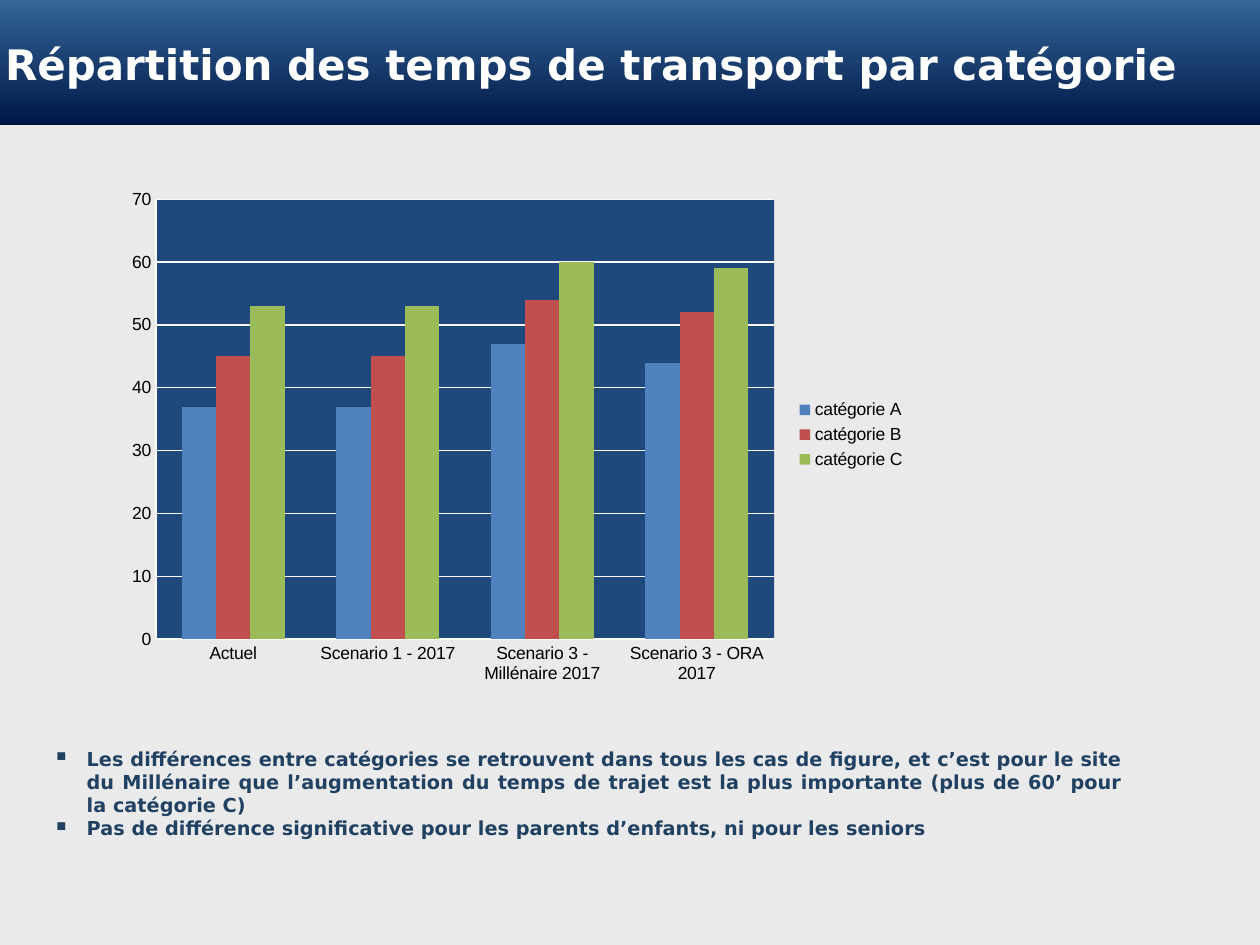
from lxml import etree
from pptx import Presentation
from pptx import util as u
from pptx.chart import data as chart_data
from pptx.dml import color
from pptx.enum import chart as ch
from pptx.enum import shapes, text
from pptx.oxml import parse_xml
from pptx.oxml import ns

CATEGORIES = ["Actuel", "Scenario 1 - 2017", "Scenario 3 - Millénaire 2017", "Scenario 3 - ORA 2017"]
SERIES = [
    ("catégorie A", (37, 37, 47, 44), "4F81BD"),
    ("catégorie B", (45, 45, 54, 52), "C0504D"),
    ("catégorie C", (53, 53, 60, 59), "9BBB59"),
]
COMMENTS = [
    "Les différences entre catégories se retrouvent dans tous les cas de figure, et c’est pour le site "
    "du Millénaire que l’augmentation du temps de trajet est la plus importante (plus de 60’ pour la catégorie C)",
    "Pas de différence significative pour les parents d’enfants, ni pour les seniors",
]


def rgb(value):
    """Turn a hex string into a colour."""
    return color.RGBColor.from_string(value)


def inches(*lengths):
    """Convert several lengths to inches."""
    return [u.Inches(length) for length in lengths]


def format_font(font, name, size, hex_color, bold=False):
    """Set the face, size, colour and weight of a font."""
    font.name = name
    font.size = u.Pt(size)
    font.color.rgb = rgb(hex_color)
    font.bold = bold


def set_margins(frame, horizontal, vertical):
    """Set the inner margins of a text frame and let it wrap."""
    frame.word_wrap = True
    frame.auto_size = text.MSO_AUTO_SIZE.NONE
    frame.margin_left = frame.margin_right = u.Inches(horizontal)
    frame.margin_top = frame.margin_bottom = u.Inches(vertical)


def add_header(slide, left, top, width, height):
    """Draw the gradient banner and set the title over it."""
    banner = slide.shapes.add_shape(shapes.MSO_SHAPE.RECTANGLE, *inches(left, top, width, height))
    banner.shadow.inherit = False
    banner.line.fill.background()
    banner.fill.gradient()
    banner.fill.gradient_angle = 270
    for stop, hex_color, position in zip(banner.fill.gradient_stops, ("336699", "001746"), (0, 1)):
        stop.color.rgb = rgb(hex_color)
        stop.position = position

    title = slide.shapes.title
    title.element.addprevious(banner.element)
    title.left, title.top, title.width, title.height = inches(left, top + 0.13, width - 0.25, 0.75)
    frame = title.text_frame
    frame.text = "Répartition des temps de transport par catégorie"
    set_margins(frame, 0.04, 0.04)
    frame.vertical_anchor = text.MSO_ANCHOR.MIDDLE
    paragraph = frame.paragraphs[0]
    paragraph.alignment = text.PP_ALIGN.LEFT
    format_font(paragraph.runs[0].font, "DejaVu Sans", 24, "FFFFFF", True)


def format_plot_area(chart, hex_color, x, y, width, height):
    """Fill the plot area and fix its inner frame as fractions of the chart."""
    plot_area = chart.plots[0]._element.getparent()
    for layout in plot_area.findall(ns.qn("c:layout")):
        plot_area.remove(layout)
    sizes = "".join(
        f'<c:{name} val="{value}"/>' for name, value in zip("xywh", (x, y, width, height))
    )
    plot_area.insert(0, parse_xml(
        f'<c:layout {ns.nsdecls("c")}><c:manualLayout><c:layoutTarget val="inner"/>'
        f'<c:xMode val="edge"/><c:yMode val="edge"/>{sizes}</c:manualLayout></c:layout>'
    ))
    plot_area.append(parse_xml(
        f'<c:spPr {ns.nsdecls("c", "a")}><a:solidFill><a:srgbClr val="{hex_color}"/></a:solidFill>'
        "<a:ln><a:noFill/></a:ln></c:spPr>"
    ))


def format_line(line):
    """Give an axis or grid line its pale thin stroke."""
    line.color.rgb = rgb("F9F9F9")
    line.width = u.Pt(0.75)


def add_travel_chart(slide, left, top, width, height):
    """Add the clustered columns of travel times."""
    data = chart_data.CategoryChartData()
    data.categories = CATEGORIES
    for name, values, _ in SERIES:
        data.add_series(name, values)
    chart = slide.shapes.add_chart(
        ch.XL_CHART_TYPE.COLUMN_CLUSTERED, *inches(left, top, width, height), data
    ).chart
    format_font(chart.font, "Arial", 10, "000000")
    chart.has_title = False
    chart.has_legend = True
    chart.legend.position = ch.XL_LEGEND_POSITION.RIGHT
    chart.legend.include_in_layout = False

    plot = chart.plots[0]
    plot.gap_width = 150
    plot.overlap = 0
    plot.vary_by_categories = False
    for series, (_, _, hex_color) in zip(plot.series, SERIES):
        series.format.fill.solid()
        series.format.fill.fore_color.rgb = rgb(hex_color)

    for axis in (chart.category_axis, chart.value_axis):
        axis.major_tick_mark = axis.minor_tick_mark = ch.XL_TICK_MARK.NONE
        format_line(axis.format.line)
    value_axis = chart.value_axis
    value_axis.minimum_scale, value_axis.maximum_scale, value_axis.major_unit = 0, 70, 10
    value_axis.has_major_gridlines = True
    format_line(value_axis.major_gridlines.format.line)
    format_plot_area(chart, "1F497D", 0.05, 0.04, 0.77, 0.86)


def add_bullet(paragraph, indent):
    """Give a paragraph a small square bullet with a hanging indent."""
    properties = paragraph._p.get_or_add_pPr()
    properties.set("marL", str(u.Inches(indent)))
    properties.set("indent", str(-u.Inches(indent)))
    etree.SubElement(properties, ns.qn("a:buSzPct")).set("val", "70000")
    etree.SubElement(properties, ns.qn("a:buChar")).set("char", "■")


def add_comments(slide, left, top, width, height):
    """Write the bulleted comments below the chart."""
    frame = slide.shapes.add_textbox(*inches(left, top, width, height)).text_frame
    frame.text = "\n".join(COMMENTS)
    set_margins(frame, 0.1, 0.05)
    for paragraph in frame.paragraphs:
        paragraph.alignment = text.PP_ALIGN.JUSTIFY
        add_bullet(paragraph, 0.24)
        format_font(paragraph.runs[0].font, "DejaVu Sans", 11, "204162", True)


def main():
    """Build and save the presentation."""
    presentation = Presentation()
    presentation.slide_width, presentation.slide_height = inches(10, 7.5)
    slide = presentation.slides.add_slide(presentation.slide_layouts[5])
    slide.background.fill.solid()
    slide.background.fill.fore_color.rgb = rgb("EAEAEA")
    add_header(slide, 0, 0, 10, 0.99)
    add_travel_chart(slide, 0.92, 1.42, 6.37, 4.06)
    add_comments(slide, 0.35, 5.88, 8.66, 0.91)
    presentation.save("out.pptx")


if __name__ == "__main__":
    main()
